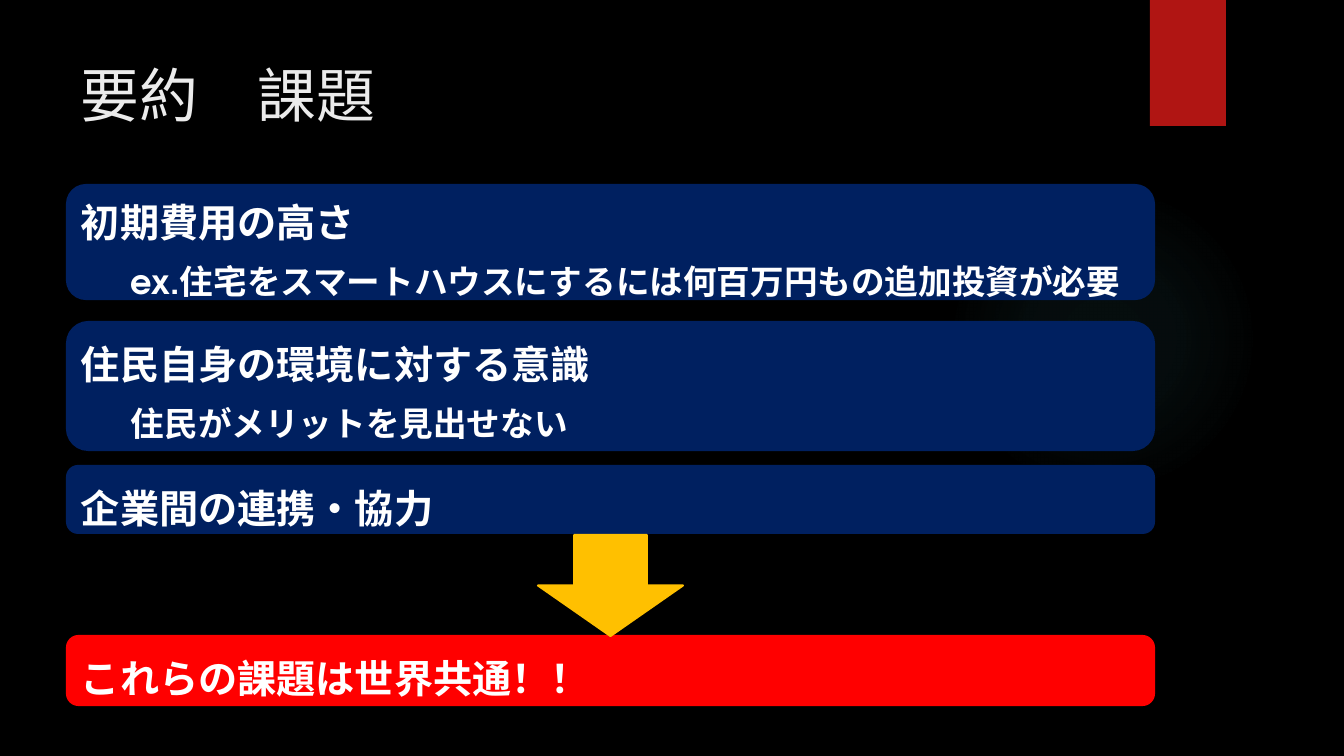
from lxml import etree
from pptx import Presentation
from pptx.dml.color import RGBColor
from pptx.enum.shapes import MSO_SHAPE
from pptx.enum.text import MSO_ANCHOR, PP_ALIGN
from pptx.oxml import parse_xml
from pptx.oxml.ns import nsdecls, qn
from pptx.util import Emu, Pt

FONT = "TeX Gyre Adventor"
NAVY, RED, AMBER, WHITE = "002060", "FF0000", "FFC000", "FFFFFF"
CARD_LEFT, CARD_WIDTH, TEXT_LEFT = 67, 1087, 81


def px(length):
    return Emu(round(length * 914400 / 100.8))


def color(value):
    return RGBColor.from_string(value)


def add_text(paragraph, text, size=28, fill=WHITE, bold=True, leading=34, before=0, indent=0):
    paragraph.alignment = PP_ALIGN.LEFT
    paragraph.line_spacing = Pt(leading)
    paragraph.space_before = Pt(before)
    if indent:
        properties = paragraph._p.get_or_add_pPr()
        properties.set("marL", str(px(indent)))
        properties.set("indent", "0")
    span = paragraph.add_run()
    span.text = text
    span.font.name = FONT
    span.font.size = Pt(size)
    span.font.bold = bold
    span.font.color.rgb = color(fill)


class Slide:
    def __init__(self, deck):
        self.page = deck.slides.add_slide(deck.slide_layouts[6])
        self.page.background.fill.solid()
        self.page.background.fill.fore_color.rgb = color("000000")

    def shape(self, kind, left, top, width, height, fill, outlined=True):
        shape = self.page.shapes.add_shape(kind, px(left), px(top), px(width), px(height))
        shape.shadow.inherit = False
        shape.fill.solid()
        shape.fill.fore_color.rgb = color(fill)
        if outlined:
            shape.line.color.rgb = color(fill)
            shape.line.width = Pt(1.5)
        else:
            shape.line.fill.background()
        return shape

    def glow(self, left, top, size, tint, stops):
        shape = self.shape(MSO_SHAPE.OVAL, left, top, size, size, tint, outlined=False)
        gradient = parse_xml(
            f'<a:gradFill {nsdecls("a")} rotWithShape="1"><a:gsLst/><a:path path="circle">'
            '<a:fillToRect l="50000" t="50000" r="50000" b="50000"/></a:path></a:gradFill>')
        for position, opacity in stops:
            stop = etree.SubElement(gradient[0], qn("a:gs"), pos=str(position * 1000))
            tone = etree.SubElement(stop, qn("a:srgbClr"), val=tint)
            etree.SubElement(tone, qn("a:alpha"), val=str(opacity * 1000))
        properties = shape._element.spPr
        properties.replace(properties.find(qn("a:solidFill")), gradient)

    def text(self, left, top, width, height):
        box = self.page.shapes.add_textbox(px(left), px(top), px(width), px(height))
        frame = box.text_frame
        frame.word_wrap = True
        frame.vertical_anchor = MSO_ANCHOR.TOP
        frame.margin_left = frame.margin_right = frame.margin_top = frame.margin_bottom = 0
        return frame

    def card(self, top, height, inset, fill, heading, detail=None):
        self.shape(MSO_SHAPE.ROUNDED_RECTANGLE, CARD_LEFT, top, CARD_WIDTH, height, fill)
        frame = self.text(TEXT_LEFT, top + inset, CARD_WIDTH, height - inset)
        add_text(frame.paragraphs[0], heading)
        if detail:
            add_text(frame.add_paragraph(), detail, size=24, leading=30, before=10, indent=50)


def main():
    deck = Presentation()
    deck.slide_width, deck.slide_height = px(1344), px(756)
    slide = Slide(deck)

    # Backdrop
    slide.glow(948, 184, 310, "50B9C1", [(0, 7), (36, 6), (69, 0)])
    slide.shape(MSO_SHAPE.RECTANGLE, 1150, 0, 76, 126, "B01513", outlined=False)

    # Title
    title = slide.text(TEXT_LEFT, 58, 1017, 100)
    add_text(title.paragraphs[0], "要約　課題", size=42, fill="EBEBEB", bold=False, leading=51)

    # Issues and conclusion
    cards = [
        (185, 114, 13, NAVY, "初期費用の高さ", "ex.住宅をスマートハウスにするには何百万円もの追加投資が必要"),
        (322, 128, 18, NAVY, "住民自身の環境に対する意識", "住民がメリットを見出せない"),
        (466, 67, 18, NAVY, "企業間の連携・協力"),
        (636, 69, 18, RED, "これらの課題は世界共通！！"),
    ]
    for card in cards:
        slide.card(*card)

    # Arrow to the conclusion
    slide.shape(MSO_SHAPE.DOWN_ARROW, 538, 535, 145, 101, AMBER)

    deck.save("out.pptx")


if __name__ == "__main__":
    main()
